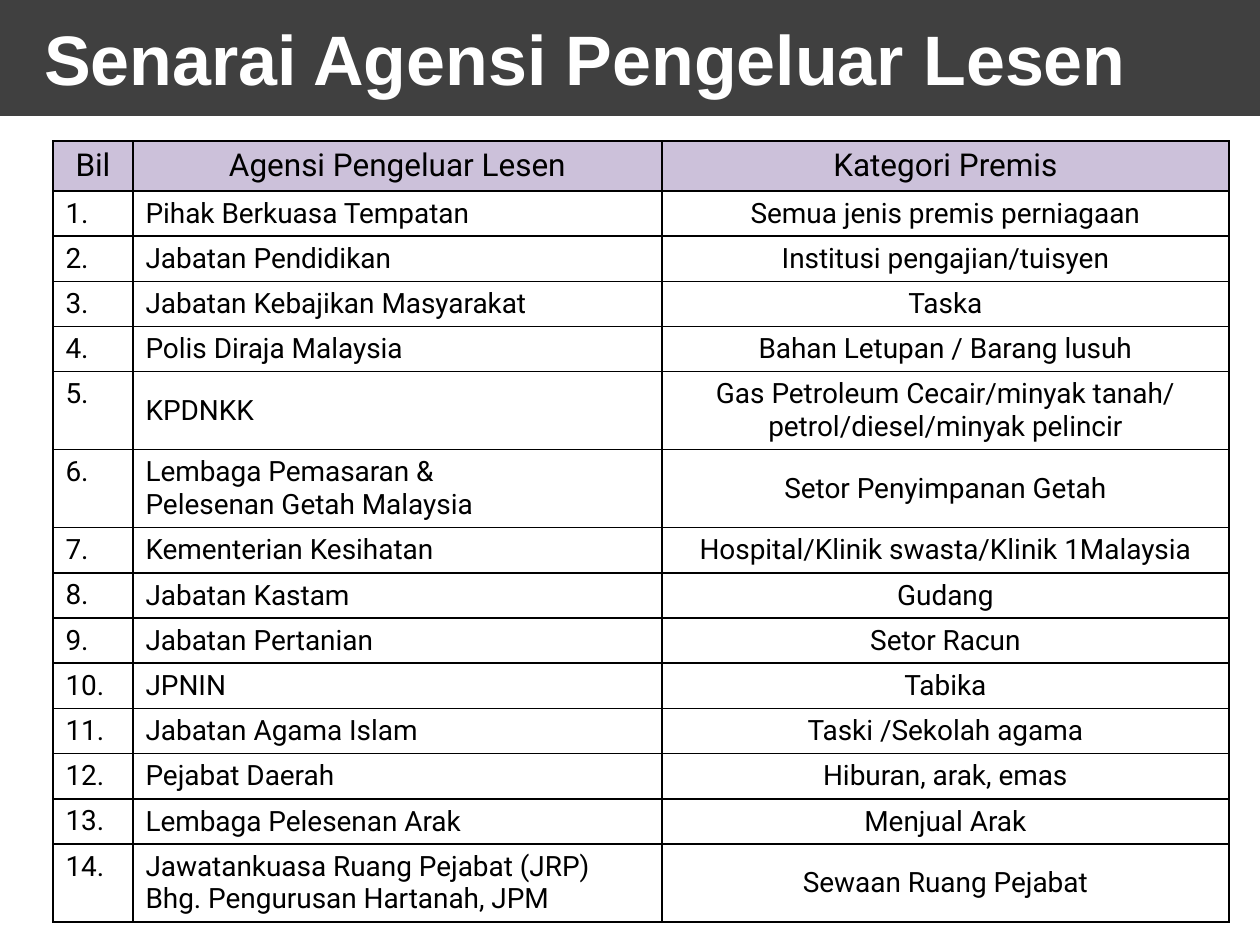
"""Build the slide listing the licensing agencies and their premises categories."""
from typing import NamedTuple

import pptx
import pptx.dml.color
import pptx.enum.shapes
import pptx.enum.text
import pptx.oxml
import pptx.oxml.ns
import pptx.util

PX = 914400 / 126
COLORS = {"bar": "404040", "header": "CCC1DA", "body": "FFFFFF",
          "text": "000000", "title": "FFFFFF", "border": "000000"}
PP_ALIGN = pptx.enum.text.PP_ALIGN
MSO_ANCHOR = pptx.enum.text.MSO_ANCHOR


class Column(NamedTuple):
    title: str
    width: int
    align: PP_ALIGN
    anchor: MSO_ANCHOR


class Agency(NamedTuple):
    name: str
    premises: str


COLUMNS = [
    Column("Bil", 80, PP_ALIGN.LEFT, MSO_ANCHOR.TOP),
    Column("Agensi Pengeluar Lesen", 529, PP_ALIGN.LEFT, MSO_ANCHOR.MIDDLE),
    Column("Kategori Premis", 567, PP_ALIGN.CENTER, MSO_ANCHOR.MIDDLE),
]
AGENCIES = [
    Agency("Pihak Berkuasa Tempatan", "Semua jenis premis perniagaan"),
    Agency("Jabatan Pendidikan", "Institusi pengajian/tuisyen"),
    Agency("Jabatan Kebajikan Masyarakat", "Taska"),
    Agency("Polis Diraja Malaysia", "Bahan Letupan / Barang lusuh"),
    Agency("KPDNKK", "Gas Petroleum Cecair/minyak tanah/\npetrol/diesel/minyak pelincir"),
    Agency("Lembaga Pemasaran &\nPelesenan Getah Malaysia", "Setor Penyimpanan Getah"),
    Agency("Kementerian Kesihatan", "Hospital/Klinik swasta/Klinik 1Malaysia"),
    Agency("Jabatan Kastam", "Gudang"),
    Agency("Jabatan Pertanian", "Setor Racun"),
    Agency("JPNIN", "Tabika"),
    Agency("Jabatan Agama Islam", "Taski /Sekolah agama"),
    Agency("Pejabat Daerah", "Hiburan, arak, emas"),
    Agency("Lembaga Pelesenan Arak", "Menjual Arak"),
    Agency("Jawatankuasa Ruang Pejabat (JRP)\nBhg. Pengurusan Hartanah, JPM",
           "Sewaan Ruang Pejabat"),
]
HEADER_HEIGHT, LINE_HEIGHTS = 50, {1: 45, 2: 78}


def px(n: int) -> int:
    return round(n * PX)


def rgb(name: str) -> pptx.dml.color.RGBColor:
    return pptx.dml.color.RGBColor.from_string(COLORS[name])


def style_font(p, face: str, size: int, color: str, bold: bool = False) -> None:
    p.font.name, p.font.size, p.font.bold = face, pptx.util.Pt(size), bold
    p.font.color.rgb = rgb(color)


def add_borders(cell) -> None:
    ns = pptx.oxml.ns.nsdecls("a")
    tc_pr = cell._tc.get_or_add_tcPr()
    for side in "LRTB":
        tc_pr.append(pptx.oxml.parse_xml(
            f'<a:ln{side} {ns} w="12700"><a:solidFill>'
            f'<a:srgbClr val="{COLORS["border"]}"/></a:solidFill></a:ln{side}>'))


def fill_cell(cell, text: str, size: int, fill: str, align: PP_ALIGN, anchor: MSO_ANCHOR) -> None:
    add_borders(cell)
    cell.fill.solid()
    cell.fill.fore_color.rgb = rgb(fill)
    cell.vertical_anchor = anchor
    cell.text_frame.text = text
    for p in cell.text_frame.paragraphs:
        p.alignment = align
        style_font(p, "Roboto", size, "text")


def add_agency_table(s) -> None:
    rows = [(f"{i}.", *agency) for i, agency in enumerate(AGENCIES, 1)]
    heights = [HEADER_HEIGHT] + [
        LINE_HEIGHTS[1 + max(text.count("\n") for text in row)] for row in rows]
    table = s.shapes.add_table(
        len(heights), len(COLUMNS), px(53), px(141),
        px(sum(c.width for c in COLUMNS)), px(sum(heights))).table
    table.first_row = table.horz_banding = False
    for row, height in zip(table.rows, heights):
        row.height = px(height)
    for j, column in enumerate(COLUMNS):
        table.columns[j].width = px(column.width)
        fill_cell(table.cell(0, j), column.title, 18, "header", PP_ALIGN.CENTER, MSO_ANCHOR.TOP)
        for i, row in enumerate(rows, 1):
            fill_cell(table.cell(i, j), row[j], 16, "body", column.align, column.anchor)


def add_title_bar(s, text: str) -> None:
    sp = s.shapes.add_shape(
        pptx.enum.shapes.MSO_SHAPE.RECTANGLE, px(-5), 0, px(1265), px(116))
    sp.shadow.inherit = False
    sp.fill.solid()
    sp.fill.fore_color.rgb = rgb("bar")
    sp.line.fill.background()
    tf = sp.text_frame
    tf.word_wrap = True
    tf.margin_left = px(49)
    tf.vertical_anchor = MSO_ANCHOR.MIDDLE
    p = tf.paragraphs[0]
    p.text = text
    p.alignment = PP_ALIGN.LEFT
    style_font(p, "Arial", 40, "title", bold=True)


def main() -> None:
    prs = pptx.Presentation()
    prs.slide_width, prs.slide_height = px(1260), px(945)
    s = prs.slides.add_slide(prs.slide_layouts[6])
    add_agency_table(s)
    add_title_bar(s, "Senarai Agensi Pengeluar Lesen")
    prs.save("out.pptx")


if __name__ == "__main__":
    main()
